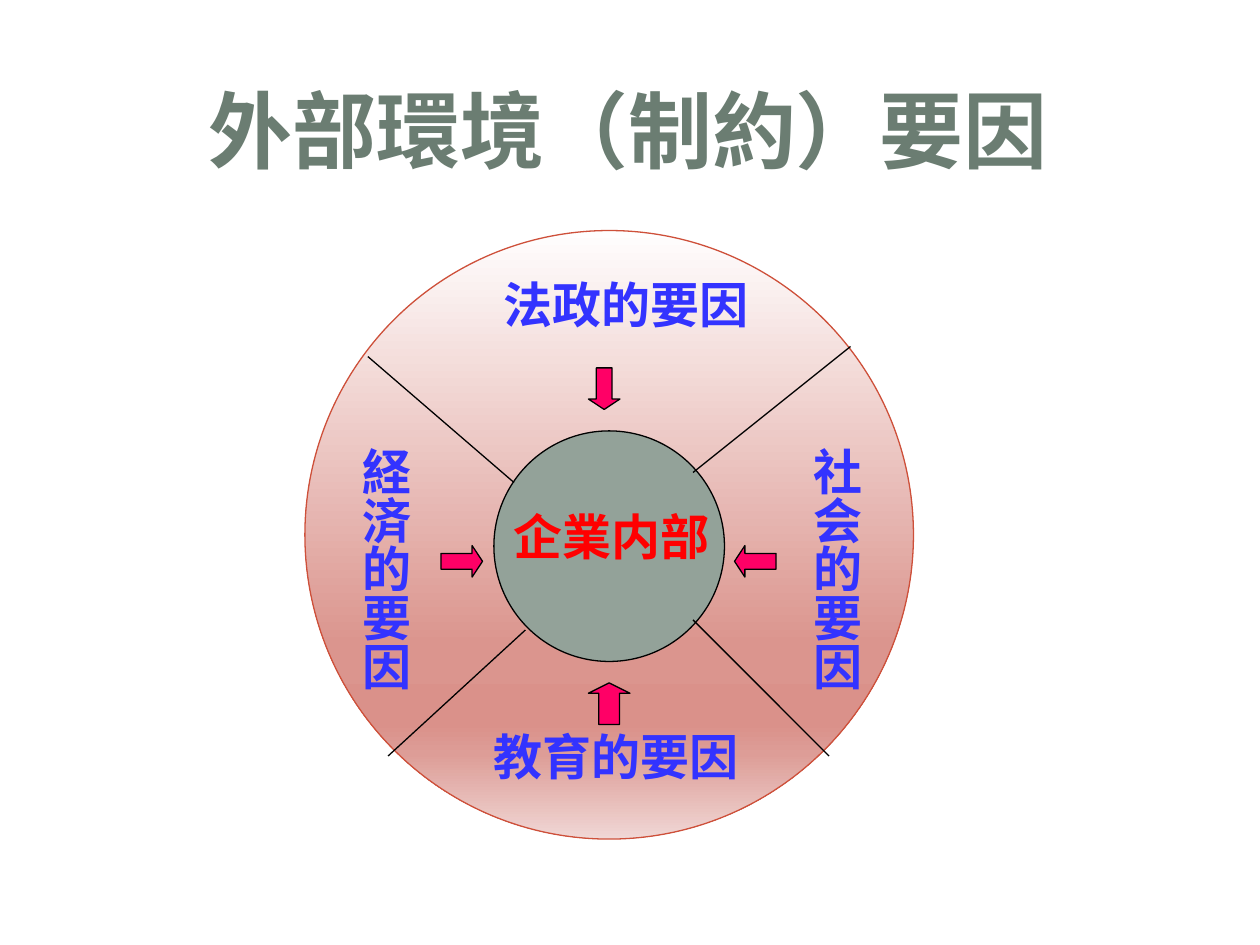
from typing import NamedTuple

from lxml.etree import SubElement
from pptx import Presentation
from pptx.dml.color import RGBColor
from pptx.enum.shapes import MSO_CONNECTOR, MSO_SHAPE
from pptx.enum.text import MSO_ANCHOR, MSO_AUTO_SIZE, PP_ALIGN
from pptx.oxml.ns import qn
from pptx.shapes.autoshape import Shape
from pptx.slide import Slide
from pptx.util import Inches, Pt

WHITE = RGBColor(0xFF, 0xFF, 0xFF)
BLACK = RGBColor(0x00, 0x00, 0x00)
TITLE_GREEN = RGBColor(0x6B, 0x7D, 0x72)
CORE_GREEN = RGBColor(0x93, 0xA2, 0x99)
RING_RED = RGBColor(0xCE, 0x50, 0x3A)
LABEL_BLUE = RGBColor(0x33, 0x33, 0xFF)
CORE_RED = RGBColor(0xFF, 0x00, 0x00)
ARROW_PINK = RGBColor(0xFF, 0x00, 0x66)
RING_STOPS = (
    (0, RGBColor(0xFF, 0xFE, 0xFE)),
    (68, RGBColor(0xDB, 0x95, 0x8E)),
    (81, RGBColor(0xDA, 0x91, 0x8A)),
    (86, RGBColor(0xDD, 0x9D, 0x97)),
    (100, RGBColor(0xF0, 0xD7, 0xD5)),
)


class Area(NamedTuple):
    left: float
    top: float
    width: float
    height: float


class Label(NamedTuple):
    text: str
    area: Area
    color: RGBColor = LABEL_BLUE
    vertical: bool = False


class Divider(NamedTuple):
    start: tuple[float, float]
    end: tuple[float, float]


class Arrow(NamedTuple):
    kind: MSO_SHAPE
    area: Area
    head: float = 0.33


RING = Area(2.42, 1.83, 4.83, 4.83)
CORE = Area(3.92, 3.42, 1.83, 1.83)
DIVIDERS = (
    Divider((2.92, 2.83), (4.08, 3.83)),
    Divider((4.17, 5), (3.08, 6)),
    Divider((5.5, 4.92), (6.58, 6)),
    Divider((5.5, 3.75), (6.75, 2.75)),
)
LABELS = (
    Label("教育的要因", Area(3.82, 5.72, 2.16, 0.57)),
    Label("経済的要因", Area(2.67, 3.45, 0.67, 2.06), vertical=True),
    Label("社会的要因", Area(6.25, 3.45, 0.67, 2.06), vertical=True),
    Label("企業内部", Area(3.98, 3.97, 1.77, 0.57), CORE_RED),
    Label("法政的要因", Area(3.9, 2.13, 2.16, 0.57)),
)
ARROWS = (
    Arrow(MSO_SHAPE.RIGHT_ARROW, Area(3.5, 4.33, 0.33, 0.25)),
    Arrow(MSO_SHAPE.LEFT_ARROW, Area(5.83, 4.33, 0.33, 0.25)),
    Arrow(MSO_SHAPE.DOWN_ARROW, Area(4.67, 2.92, 0.25, 0.33)),
    Arrow(MSO_SHAPE.UP_ARROW, Area(4.67, 5.42, 0.33, 0.33), 0.25),
)


def add_text(page: Slide, text: str, area: Area, *, color: RGBColor,
             font: str = "Times New Roman", size: float = 28,
             align: PP_ALIGN = PP_ALIGN.LEFT, anchor: MSO_ANCHOR = MSO_ANCHOR.TOP,
             wrap: bool = False, vertical: bool = False) -> None:
    box = page.shapes.add_textbox(*map(Inches, area))
    frame = box.text_frame
    frame.word_wrap = wrap
    frame.auto_size = MSO_AUTO_SIZE.NONE if wrap else MSO_AUTO_SIZE.SHAPE_TO_FIT_TEXT
    frame.vertical_anchor = anchor
    if vertical:
        frame._txBody.bodyPr.set("vert", "eaVert")
    para = frame.paragraphs[0]
    para.alignment = align
    span = para.add_run()
    span.text = text
    span.font.name = font
    span.font.size = Pt(size)
    span.font.bold = True
    span.font.color.rgb = color


def add_figure(page: Slide, kind: MSO_SHAPE, area: Area, fill: RGBColor,
               line: RGBColor = BLACK) -> Shape:
    shape = page.shapes.add_shape(kind, *map(Inches, area))
    shape.shadow.inherit = False
    shape.fill.solid()
    shape.fill.fore_color.rgb = fill
    shape.line.color.rgb = line
    shape.line.width = Pt(0.75)
    return shape


def add_ring(page: Slide) -> None:
    ring = add_figure(page, MSO_SHAPE.OVAL, RING, WHITE, RING_RED)
    ring.fill.gradient()
    gradient = ring._element.spPr.find(qn("a:gradFill"))
    stops = gradient.find(qn("a:gsLst"))
    for stop in list(stops):
        stops.remove(stop)
    for percent, color in RING_STOPS:
        stop = SubElement(stops, qn("a:gs"), pos=str(percent * 1000))
        SubElement(stop, qn("a:srgbClr"), val=str(color))
    direction = gradient.find(qn("a:lin"))
    direction.set("ang", "5400000")
    direction.set("scaled", "0")


def add_divider(page: Slide, divider: Divider) -> None:
    line = page.shapes.add_connector(
        MSO_CONNECTOR.STRAIGHT, *map(Inches, divider.start + divider.end))
    line.line.color.rgb = BLACK
    line.line.width = Pt(0.75)
    SubElement(line._element.spPr, qn("a:effectLst"))


def add_arrow(page: Slide, arrow: Arrow) -> None:
    shape = add_figure(page, arrow.kind, arrow.area, ARROW_PINK)
    shape.adjustments[0] = 0.5
    shape.adjustments[1] = arrow.head


def main() -> None:
    """Build the slide of external factors around the company."""
    deck = Presentation()
    deck.slide_width, deck.slide_height = Inches(10), Inches(7.5)
    page = deck.slides.add_slide(deck.slide_layouts[6])
    page.background.fill.solid()
    page.background.fill.fore_color.rgb = WHITE
    add_text(page, "外部環境（制約）要因", Area(0.47, 0.45, 9.03, 1.14),
             color=TITLE_GREEN, font="Arial", size=48, align=PP_ALIGN.CENTER,
             anchor=MSO_ANCHOR.MIDDLE, wrap=True)
    add_ring(page)
    add_figure(page, MSO_SHAPE.OVAL, CORE, CORE_GREEN)
    for divider in DIVIDERS:
        add_divider(page, divider)
    for label in LABELS:
        add_text(page, label.text, label.area, color=label.color,
                 vertical=label.vertical)
    for arrow in ARROWS:
        add_arrow(page, arrow)
    deck.save("out.pptx")


if __name__ == "__main__":
    main()
